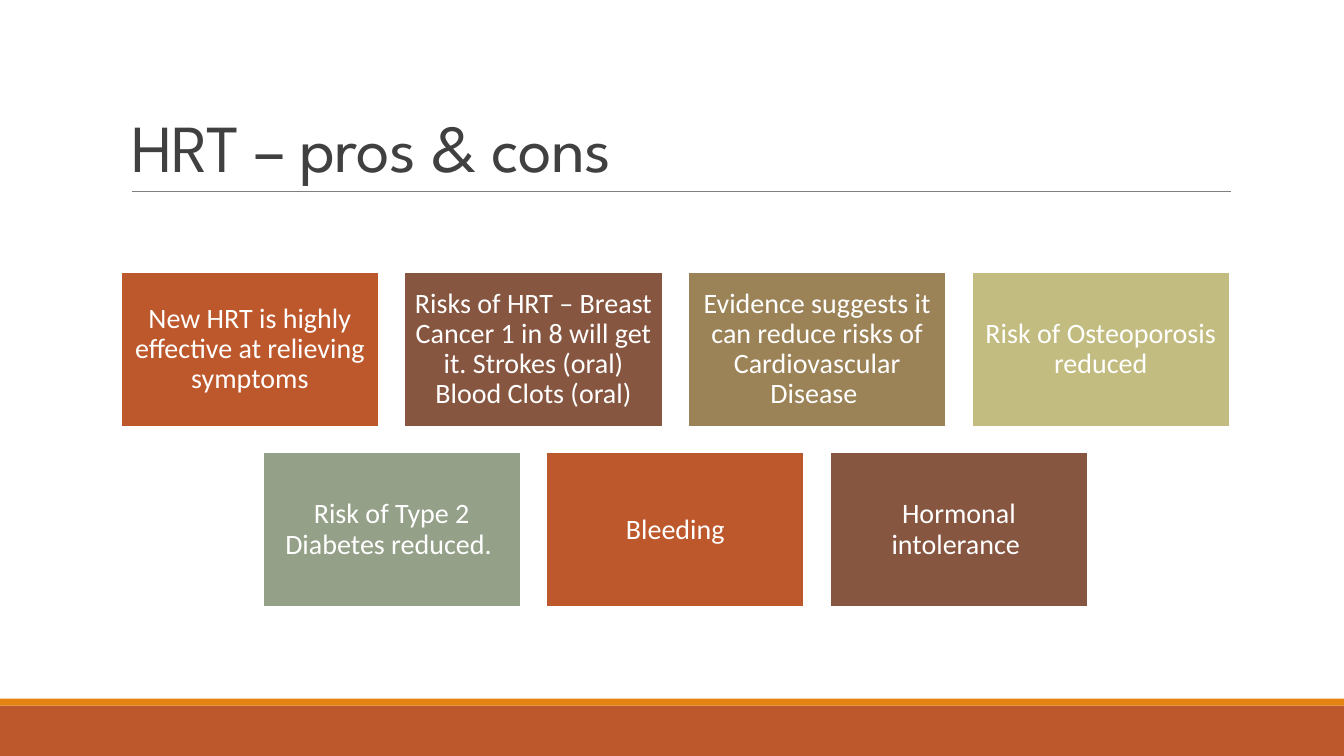
from pptx import Presentation
from pptx.dml.color import RGBColor
from pptx.enum import shapes, text
from pptx.oxml.ns import qn
from pptx.util import Pt

RUST = RGBColor(0xBD, 0x58, 0x2C)
ORANGE = RGBColor(0xE4, 0x83, 0x12)
BROWN = RGBColor(0x86, 0x56, 0x40)
TAN = RGBColor(0x9B, 0x83, 0x57)
KHAKI = RGBColor(0xC2, 0xBC, 0x80)
SAGE = RGBColor(0x94, 0xA0, 0x88)
GREY = RGBColor(0x80, 0x80, 0x80)
INK = RGBColor(0x40, 0x40, 0x40)
WHITE = RGBColor(0xFF, 0xFF, 0xFF)

TITLE = "HRT – pros & cons"
CARD_ROWS = [
    [("New HRT is highly effective at relieving symptoms", RUST),
     ("Risks of HRT – Breast Cancer 1 in 8 will get it. Strokes (oral) Blood Clots (oral)", BROWN),
     ("Evidence suggests it can reduce risks of Cardiovascular Disease ", TAN),
     ("Risk of Osteoporosis reduced", KHAKI)],
    [("Risk of Type 2 Diabetes reduced. ", SAGE),
     ("Bleeding", RUST),
     ("Hormonal intolerance ", BROWN)],
]
FOOTER_BANDS = [(504, 36, RUST), (499, 5, ORANGE)]  # top, height, colour

SLIDE_W, SLIDE_H = 960, 540
CARD_W, CARD_H, GAP = 184.2, 110.5, 18.4
CARDS_TOP, CARDS_CENTER = 194.4, 482.4

TITLE_FRAME = dict(vertical_anchor=text.MSO_ANCHOR.BOTTOM, word_wrap=True,
                   auto_size=text.MSO_AUTO_SIZE.NONE)
TITLE_PARAGRAPH = dict(alignment=text.PP_ALIGN.LEFT, line_spacing=0.85)
TITLE_FONT = dict(name="League Spartan", size=Pt(48))
CARD_FRAME = dict(vertical_anchor=text.MSO_ANCHOR.MIDDLE, word_wrap=True,
                  margin_left=Pt(6), margin_right=Pt(6),
                  margin_top=Pt(6), margin_bottom=Pt(6))
CARD_PARAGRAPH = dict(alignment=text.PP_ALIGN.CENTER, line_spacing=0.9)
CARD_FONT = dict(name="Calibri", size=Pt(20))


def apply(target, formats):
    for name, value in formats.items():
        setattr(target, name, value)


def write(sp, words, frame, paragraph, font, color):
    tf = sp.text_frame
    apply(tf, frame)
    p = tf.paragraphs[0]
    apply(p, paragraph)
    r = p.add_run()
    r.text = words
    apply(r.font, font)
    r.font.color.rgb = color
    return r


def add_rect(s, left, top, width, height, color):
    sp = s.shapes.add_shape(shapes.MSO_SHAPE.RECTANGLE,
                            Pt(left), Pt(top), Pt(width), Pt(height))
    sp.shadow.inherit = False
    sp.fill.solid()
    sp.fill.fore_color.rgb = color
    sp.line.fill.background()
    return sp


def add_title(s):
    sp = s.shapes.title
    apply(sp, dict(left=Pt(86.4), top=Pt(22.5), width=Pt(792), height=Pt(114.2)))
    r = write(sp, TITLE, TITLE_FRAME, TITLE_PARAGRAPH, TITLE_FONT, INK)
    r.font._element.set("spc", "-50")  # letter spacing, hundredths of a point


def add_title_rule(s):
    rule = s.shapes.add_connector(shapes.MSO_CONNECTOR.STRAIGHT,
                                  Pt(94), Pt(136.8), Pt(879), Pt(136.8))
    rule.line.color.rgb = GREY
    rule.line.width = Pt(0.5)
    sp_pr = rule._element.spPr
    sp_pr.append(sp_pr.makeelement(qn("a:effectLst"), {}))


def add_cards(s):
    for i, row in enumerate(CARD_ROWS):
        row_w = len(row) * (CARD_W + GAP) - GAP
        top = CARDS_TOP + i * (CARD_H + GAP)
        for j, (words, color) in enumerate(row):
            left = CARDS_CENTER - row_w / 2 + j * (CARD_W + GAP)
            sp = add_rect(s, left, top, CARD_W, CARD_H, color)
            sp.line.color.rgb = WHITE
            sp.line.width = Pt(1.25)
            write(sp, words, CARD_FRAME, CARD_PARAGRAPH, CARD_FONT, WHITE)


def main():
    prs = Presentation()
    prs.slide_width, prs.slide_height = Pt(SLIDE_W), Pt(SLIDE_H)
    s = prs.slides.add_slide(prs.slide_layouts[5])
    for top, height, color in FOOTER_BANDS:
        add_rect(s, 0, top, SLIDE_W, height, color)
    add_title_rule(s)
    add_title(s)
    add_cards(s)
    prs.save("out.pptx")


if __name__ == "__main__":
    main()
